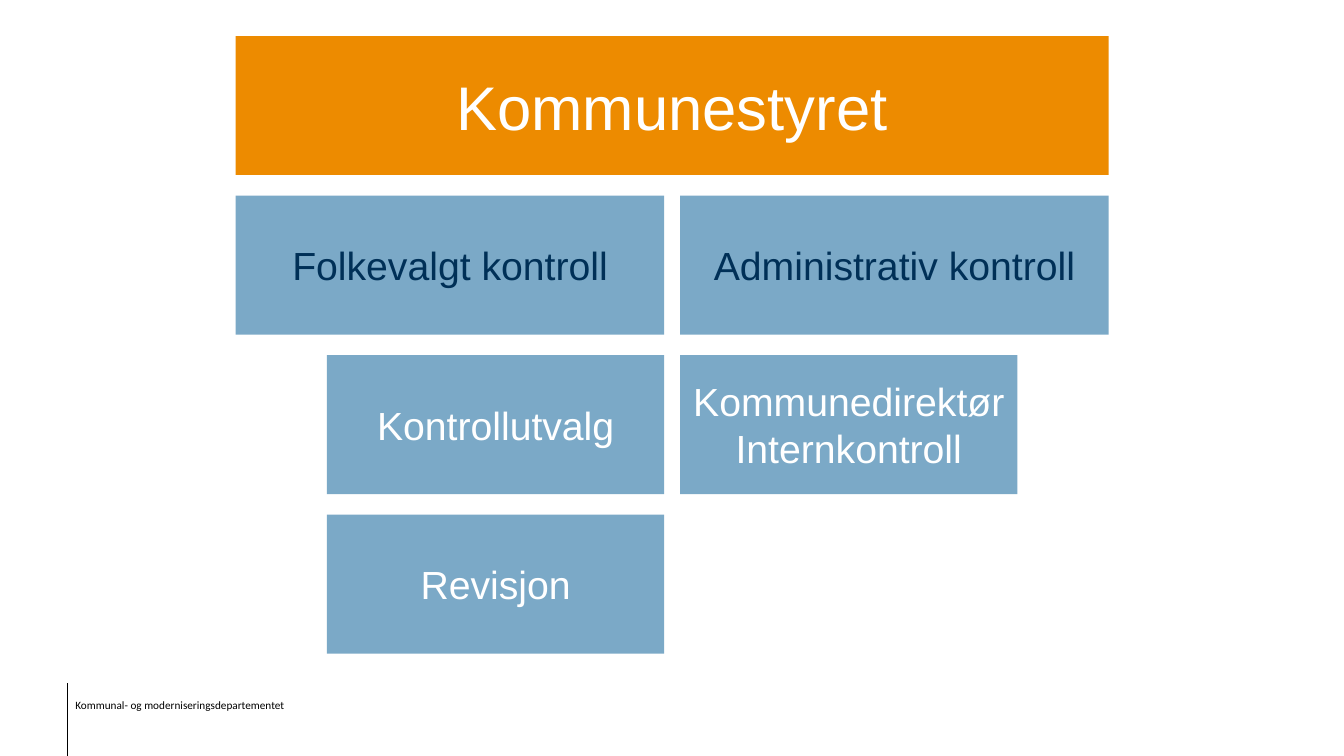
from pptx import Presentation
from pptx.dml.color import RGBColor
from pptx.enum.shapes import MSO_CONNECTOR, MSO_SHAPE
from pptx.enum.text import MSO_ANCHOR, PP_ALIGN
from pptx.oxml.ns import qn
from pptx.util import Cm, Pt
from lxml import etree

ORANGE = RGBColor(0xED, 0x8B, 0x00)
BLUE = RGBColor(0x7B, 0xA9, 0xC7)
NAVY = RGBColor(0x00, 0x30, 0x57)
WHITE = RGBColor(0xFF, 0xFF, 0xFF)
BLACK = RGBColor(0x00, 0x00, 0x00)

ROUNDED = MSO_SHAPE.ROUNDED_RECTANGLE
STRAIGHT = MSO_CONNECTOR.STRAIGHT
CENTER = PP_ALIGN.CENTER
MIDDLE = MSO_ANCHOR.MIDDLE

SLIDE_WIDTH, SLIDE_HEIGHT = 33.87, 19.05
AXIS = 16.94
GAP = 0.4
FIRST_ROW, ROW_PITCH, BOX_HEIGHT = 0.91, 4.02, 3.5
FULL_WIDTH, WIDE, NARROW = 22.0, 10.8, 8.5
INSET = 0.3
RULE_X, RULE_TOP = 1.7, 17.22

BOXES = [
    (["Folkevalgt kontroll"], 1, "left", WIDE, NAVY),
    (["Administrativ kontroll"], 1, "right", WIDE, NAVY),
    (["Kontrollutvalg"], 2, "left", NARROW, WHITE),
    (["Kommunedirektør", "Internkontroll"], 2, "right", NARROW, WHITE),
    (["Revisjon"], 3, "left", NARROW, WHITE),
]


def set_values(target, values):
    for name, value in values.items():
        setattr(target, name, value)


def write_lines(frame, lines, size, name, color, **para_values):
    for index, line in enumerate(lines):
        para = frame.paragraphs[0] if index == 0 else frame.add_paragraph()
        set_values(para, para_values)
        span = para.add_run()
        span.text = line
        set_values(span.font, {"size": Pt(size), "name": name})
        span.font.color.rgb = color


def add_box(page, lines, row, side, width, color, fill=BLUE, size=28):
    left = {
        "left": AXIS - GAP / 2 - width,
        "right": AXIS + GAP / 2,
        "center": AXIS - width / 2,
    }[side]
    top = FIRST_ROW + row * ROW_PITCH
    box = page.shapes.add_shape(ROUNDED, Cm(left), Cm(top), Cm(width), Cm(BOX_HEIGHT))
    box.adjustments[0] = 0
    box.shadow.inherit = False
    box.fill.solid()
    box.fill.fore_color.rgb = fill
    box.line.fill.background()
    frame = box.text_frame
    margins = ("margin_left", "margin_top", "margin_right", "margin_bottom")
    set_values(frame, dict.fromkeys(margins, Cm(INSET)))
    set_values(frame, {"word_wrap": True, "vertical_anchor": MIDDLE})
    write_lines(frame, lines, size, "Arial", color, alignment=CENTER)


def add_footer(page):
    box = page.shapes.add_textbox(Cm(1.65), Cm(17.5), Cm(7.2), Cm(0.56))
    box.text_frame.word_wrap = True
    write_lines(box.text_frame, ["Kommunal- og moderniseringsdepartementet"],
                8, "Calibri", BLACK, line_spacing=0.9)


def add_rule(page):
    rule = page.shapes.add_connector(
        STRAIGHT, Cm(RULE_X), Cm(RULE_TOP), Cm(RULE_X), Cm(SLIDE_HEIGHT))
    rule.line.color.rgb = BLACK
    rule.line.width = Pt(0.75)
    etree.SubElement(rule.element.spPr, qn("a:effectLst"))


def main():
    deck = Presentation()
    set_values(deck, {"slide_width": Cm(SLIDE_WIDTH), "slide_height": Cm(SLIDE_HEIGHT)})
    page = deck.slides.add_slide(deck.slide_layouts[6])
    add_footer(page)
    add_rule(page)
    add_box(page, ["Kommunestyret"], 0, "center", FULL_WIDTH, WHITE, ORANGE, 44)
    for box in BOXES:
        add_box(page, *box)
    deck.save("out.pptx")


if __name__ == "__main__":
    main()
